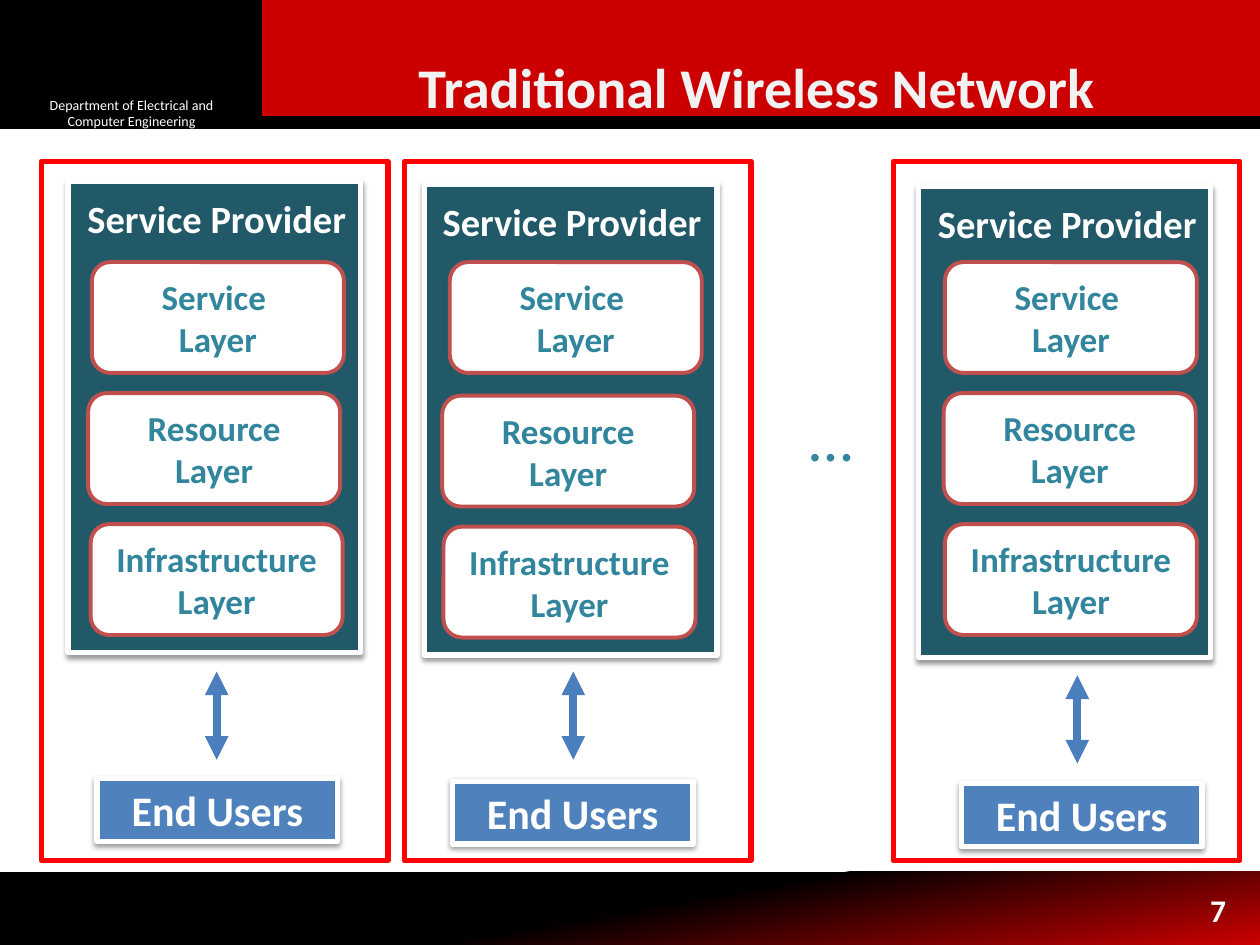
from collections import namedtuple

from lxml.etree import SubElement
from pptx import Presentation
from pptx.dml.color import RGBColor
from pptx.enum.shapes import MSO_CONNECTOR as Link, MSO_SHAPE as Shape
from pptx.enum.text import MSO_ANCHOR as Anchor, MSO_AUTO_SIZE as Fit, PP_ALIGN as Align
from pptx.oxml.ns import qn
from pptx.util import Inches, Pt

BLACK = RGBColor(0x00, 0x00, 0x00)
WHITE = RGBColor(0xFF, 0xFF, 0xFF)
OFF_WHITE = RGBColor(0xF2, 0xF2, 0xF2)
CRIMSON = RGBColor(0xCC, 0x00, 0x00)
FRAME_RED = RGBColor(0xFF, 0x00, 0x00)
LAYER_RED = RGBColor(0xC0, 0x50, 0x4D)
DARK_TEAL = RGBColor(0x21, 0x59, 0x68)
TEAL = RGBColor(0x31, 0x85, 0x9C)
BLUE = RGBColor(0x4F, 0x81, 0xBD)
ARROW_BLUE = RGBColor(0x4B, 0x7E, 0xBC)

COLS, ROWS = 10, 7.5
Column = namedtuple("Column", "frame panel heading layers shift arrow arrow_top users")
COLUMNS = [
    Column(0.33, 0.54, 0.58, (0.73, 0.70, 0.72), 0, 1.72, 5.33, 0.77),
    Column(3.21, 3.37, 3.40, (3.57, 3.51, 3.52), 0.02, 4.55, 5.33, 3.59),
    Column(7.09, 7.29, 7.33, (7.50, 7.49, 7.50), 0, 8.55, 5.36, 7.63),
]
LAYERS = ("Service \nLayer", "Resource\nLayer", "Infrastructure Layer")
LAYER_TOP, LAYER_STEP = 2.08, 1.04


def grid(*cells):
    """Turn grid cells into slide lengths."""
    return [Inches(cell) for cell in cells]


def write(shape, text, size, color, bold=True, align=Align.CENTER, anchor=Anchor.TOP, wrap=True):
    """Fill a shape with evenly formatted paragraphs."""
    tf = shape.text_frame
    tf.text = text
    frame = {"word_wrap": wrap, "auto_size": Fit.NONE, "vertical_anchor": anchor}
    for name, value in frame.items():
        setattr(tf, name, value)
    for p in tf.paragraphs:
        p.alignment = align
        for r in p.runs:
            font = {"name": "Calibri", "size": Pt(size), "bold": bold}
            for name, value in font.items():
                setattr(r.font, name, value)
            r.font.color.rgb = color


def add_box(s, at, fill=None, line=None, width=3, kind=Shape.RECTANGLE):
    """Add a flat preset shape."""
    sp = s.shapes.add_shape(kind, *grid(*at))
    sp.shadow.inherit = False
    if fill is None:
        sp.fill.background()
    else:
        sp.fill.solid()
        sp.fill.fore_color.rgb = fill
    if line is None:
        sp.line.fill.background()
    else:
        sp.line.color.rgb = line
        sp.line.width = Pt(width)
    return sp


def add_card(s, at, fill):
    """Add a white-edged box with a soft shadow below it."""
    sp = add_box(s, at, fill, WHITE)
    effects = sp.element.spPr.find(qn("a:effectLst"))
    shadow = SubElement(effects, qn("a:outerShdw"), blurRad=str(Pt(3.1)), dist=str(Pt(1.6)),
                        dir="5400000", rotWithShape="0")
    tint = SubElement(shadow, qn("a:srgbClr"), val=str(BLACK))
    SubElement(tint, qn("a:alpha"), val="38000")
    return sp


def add_label(s, at, *args, **kwargs):
    """Add a text box."""
    write(s.shapes.add_textbox(*grid(*at)), *args, **kwargs)


def add_arrow(s, x, top, height=0.7):
    """Add a vertical arrow with a head at each end."""
    link = s.shapes.add_connector(Link.STRAIGHT, *grid(x, top + height, x, top))
    link.line.color.rgb = ARROW_BLUE
    link.line.width = Pt(4.5)
    ln = link.line._get_or_add_ln()
    for end in ("a:headEnd", "a:tailEnd"):
        SubElement(ln, qn(end), type="triangle")
    SubElement(link.element.spPr, qn("a:effectLst"))


def add_banner(s, title):
    """Draw the header with its department name and title."""
    add_box(s, (0, 0.01, COLS, 1), BLACK, BLACK, 2)
    department = add_box(s, (0.17, 0.77, 1.75, 0.25), BLACK)
    write(department, "Department of Electrical and Computer Engineering", 8, WHITE,
          bold=False, anchor=Anchor.MIDDLE)
    add_box(s, (2.08, 0, COLS - 2.08, 0.92), CRIMSON)
    sp = s.shapes.title
    for name, value in zip(("left", "top", "width", "height"), grid(2.42, 0.35, 7.17, 0.67)):
        setattr(sp, name, value)
    write(sp, title, 32, OFF_WHITE, anchor=Anchor.MIDDLE)
    sp.element.getparent().append(sp.element)


def add_footer(s, number):
    """Draw the gradient footer with the slide number."""
    bar = add_box(s, (0, 6.92, COLS, ROWS - 6.92), BLACK)
    bar.fill.gradient()
    bar.fill.gradient_angle = 280
    for stop, position, color in zip(bar.fill.gradient_stops, (0.5, 1), (BLACK, CRIMSON)):
        stop.position = position
        stop.color.rgb = color
    add_label(s, (7.5, 7.02, 2.33, 0.4), number, 18, WHITE, align=Align.RIGHT)


def add_provider(s, index, col):
    """Draw one provider stack, its users and the frame around them."""
    drop = 0.02 * index
    add_card(s, (col.panel, 1.44 + drop, 2.32, 3.74), DARK_TEAL)
    add_label(s, (col.heading, 1.5 + drop, 2.28, 0.47), "Service Provider", 22, WHITE, wrap=False)
    for row, (left, text) in enumerate(zip(col.layers, LAYERS)):
        top = LAYER_TOP + row * LAYER_STEP + (col.shift if row else 0)
        layer = add_box(s, (left, top, 2, 0.88), WHITE, LAYER_RED, 2.25, Shape.ROUNDED_RECTANGLE)
        write(layer, text, 20, TEAL, anchor=Anchor.MIDDLE)
    add_arrow(s, col.arrow, col.arrow_top)
    users = add_card(s, (col.users, 6.18 + drop, 1.91, 0.5), BLUE)
    write(users, "End Users", 24, WHITE)
    add_box(s, (col.frame, 1.28, 2.75, 5.55), line=FRAME_RED)


def main():
    """Build and save the slide."""
    prs = Presentation()
    prs.slide_width, prs.slide_height = grid(COLS, ROWS)
    s = prs.slides.add_slide(prs.slide_layouts[5])
    add_banner(s, "Traditional Wireless Network")
    for index, col in enumerate(COLUMNS):
        add_provider(s, index, col)
    add_label(s, (6.33, 3.11, 0.55, 0.71), "…", 36, TEAL, bold=False, align=Align.LEFT, wrap=False)
    add_footer(s, "7")
    prs.save("out.pptx")


if __name__ == "__main__":
    main()
